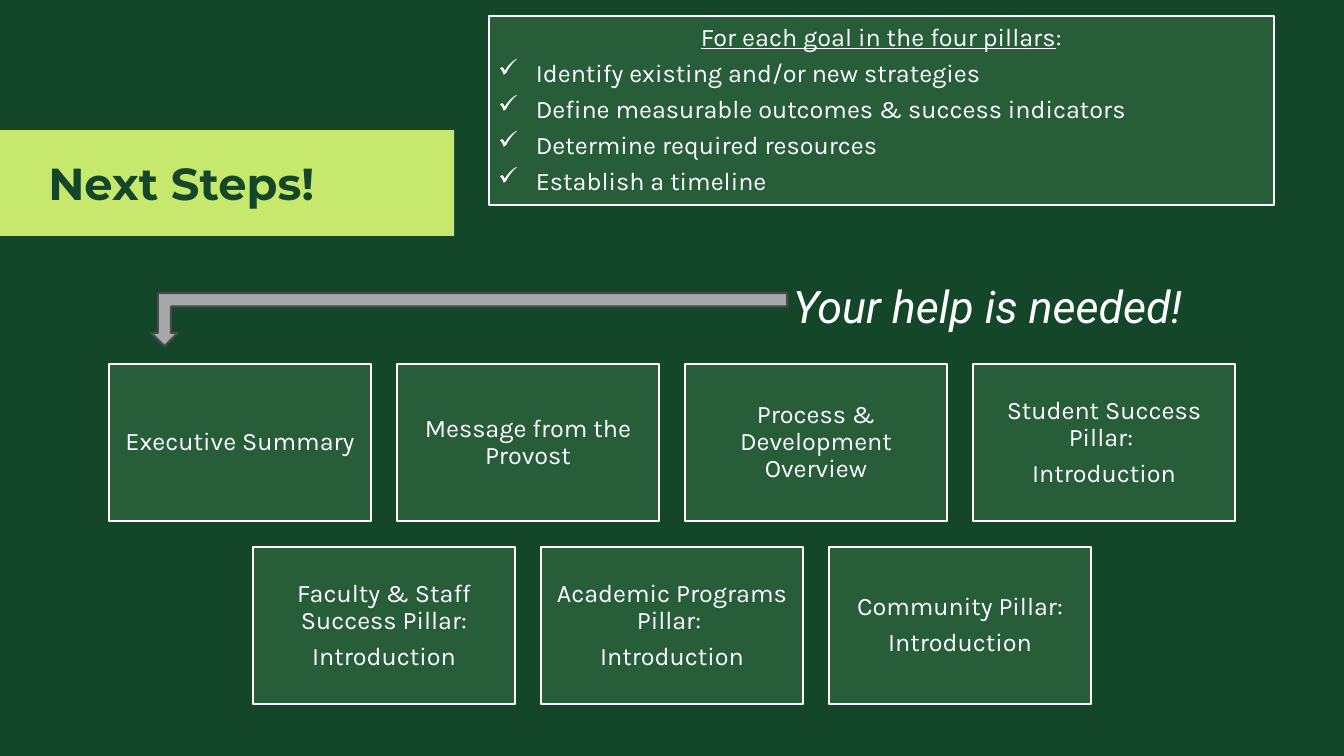
from lxml import etree
from pptx import Presentation
from pptx.dml.color import RGBColor
from pptx.enum.shapes import MSO_SHAPE
from pptx.enum.text import MSO_ANCHOR, PP_ALIGN
from pptx.oxml.ns import qn
from pptx.util import Pt

RECTANGLE, BENT_ARROW = MSO_SHAPE.RECTANGLE, MSO_SHAPE.BENT_UP_ARROW
TOP, MIDDLE = MSO_ANCHOR.TOP, MSO_ANCHOR.MIDDLE
LEFT, CENTER, RIGHT = PP_ALIGN.LEFT, PP_ALIGN.CENTER, PP_ALIGN.RIGHT

DARK_GREEN = RGBColor(0x14, 0x46, 0x29)
PANEL_GREEN = RGBColor(0x27, 0x5D, 0x38)
LIME = RGBColor(0xC6, 0xE9, 0x6D)
WHITE = RGBColor(0xFF, 0xFF, 0xFF)
GREY = RGBColor(0xA7, 0xA8, 0xAA)
DARK_GREY = RGBColor(0x49, 0x4A, 0x4B)

TITLE = {"name": "Montserrat", "size": Pt(32), "bold": True}
CALL = {"name": "Roboto", "size": Pt(32), "italic": True}
BODY = {"name": "Karla", "size": Pt(18)}
BODY_SPACING = {"line_spacing": 0.9, "space_after": Pt(6.3)}

SLIDE_WIDTH, SLIDE_HEIGHT = 960, 540
CARD_WIDTH, CARD_HEIGHT, CARD_GAP = 187, 112.2, 18.7
BULLET_INDENT = 27

CARD_ROWS = [
    [["Executive Summary"],
     ["Message from the Provost"],
     ["Process & Development Overview"],
     ["Student Success Pillar: ", "Introduction"]],
    [["Faculty & Staff Success Pillar:", "Introduction"],
     ["Academic Programs Pillar: ", "Introduction"],
     ["Community Pillar:", "Introduction"]],
]
GOAL_HEADING = "For each goal in the four pillars"
GOAL_STEPS = [
    "Identify existing and/or new strategies",
    "Define measurable outcomes & success indicators",
    "Determine required resources",
    "Establish a timeline",
]


def apply_format(target, values):
    for name, value in values.items():
        setattr(target, name, value)


def add_shape(page, kind, box, fill, line=None):
    shape = page.shapes.add_shape(kind, *map(Pt, box))
    shape.shadow.inherit = False
    shape.fill.solid()
    shape.fill.fore_color.rgb = fill
    if line is None:
        shape.line.fill.background()
    else:
        shape.line.color.rgb = line
        shape.line.width = Pt(1.5)
    return shape


def set_frame(frame, anchor, side, top):
    apply_format(frame, {
        "word_wrap": True, "vertical_anchor": anchor,
        "margin_left": Pt(side), "margin_right": Pt(side),
        "margin_top": Pt(top), "margin_bottom": Pt(top)})


def add_span(para, text, font, color):
    span = para.add_run()
    span.text = text
    apply_format(span.font, font)
    span.font.color.rgb = color
    return span


def add_body_paragraph(frame, index, align):
    para = frame.add_paragraph() if index else frame.paragraphs[0]
    apply_format(para, {"alignment": align, **BODY_SPACING})
    return para


def add_check_mark(para):
    properties = para._p.get_or_add_pPr()
    properties.set("marL", str(Pt(BULLET_INDENT)))
    properties.set("indent", str(-Pt(BULLET_INDENT)))
    etree.SubElement(properties, qn("a:buChar")).set("char", "✓")


def add_line_of_text(page, box, text, font, color, align):
    frame = page.shapes.add_textbox(*map(Pt, box)).text_frame
    set_frame(frame, TOP, 7.2, 3.6)
    para = frame.paragraphs[0]
    para.alignment = align
    add_span(para, text, font, color)


def add_title_band(page, box):
    left, top, width, height = box
    add_shape(page, RECTANGLE, box, LIME)
    add_line_of_text(page, (left + 27.4, top + 15.1, width - 40, 46),
                     "Next Steps!", TITLE, DARK_GREEN, LEFT)


def add_goal_panel(page, box):
    frame = add_shape(page, RECTANGLE, box, PANEL_GREEN, WHITE).text_frame
    set_frame(frame, MIDDLE, 6.75, 6.75)
    heading = add_body_paragraph(frame, 0, CENTER)
    add_span(heading, GOAL_HEADING, {**BODY, "underline": True}, WHITE)
    add_span(heading, ":", BODY, WHITE)
    for index, step in enumerate(GOAL_STEPS, 1):
        para = add_body_paragraph(frame, index, LEFT)
        add_check_mark(para)
        add_span(para, step, BODY, WHITE)


def add_card(page, box, lines):
    frame = add_shape(page, RECTANGLE, box, PANEL_GREEN, WHITE).text_frame
    set_frame(frame, MIDDLE, 5.4, 5.4)
    for index, line in enumerate(lines):
        add_span(add_body_paragraph(frame, index, CENTER), line, BODY, WHITE)


def add_card_rows(page, top):
    # Each row is centred on the slide
    for row, cards in enumerate(CARD_ROWS):
        row_width = len(cards) * (CARD_WIDTH + CARD_GAP) - CARD_GAP
        left = (SLIDE_WIDTH - row_width) / 2
        for column, lines in enumerate(cards):
            add_card(page, (left + column * (CARD_WIDTH + CARD_GAP),
                            top + row * (CARD_HEIGHT + CARD_GAP),
                            CARD_WIDTH, CARD_HEIGHT), lines)


def add_call_for_help(page, box):
    left, top, width, height = box
    add_line_of_text(page, box, "Your help is needed!", CALL, WHITE, RIGHT)
    # Arrow from the call down to the first card
    arrow = add_shape(page, BENT_ARROW, (left - 2, top + 14.2, 454.3, 37.8),
                      GREY, DARK_GREY)
    arrow.rotation = 180


def main():
    deck = Presentation()
    deck.slide_width, deck.slide_height = Pt(SLIDE_WIDTH), Pt(SLIDE_HEIGHT)
    page = deck.slides.add_slide(deck.slide_layouts[6])
    page.background.fill.solid()
    page.background.fill.fore_color.rgb = DARK_GREEN

    add_title_band(page, (0, 92.9, 324.5, 75.6))
    add_card_rows(page, 260)
    add_goal_panel(page, (349, 11.3, 561, 134.9))
    add_call_for_help(page, (110, 195.2, 741.8, 46))
    deck.save("out.pptx")


if __name__ == "__main__":
    main()
